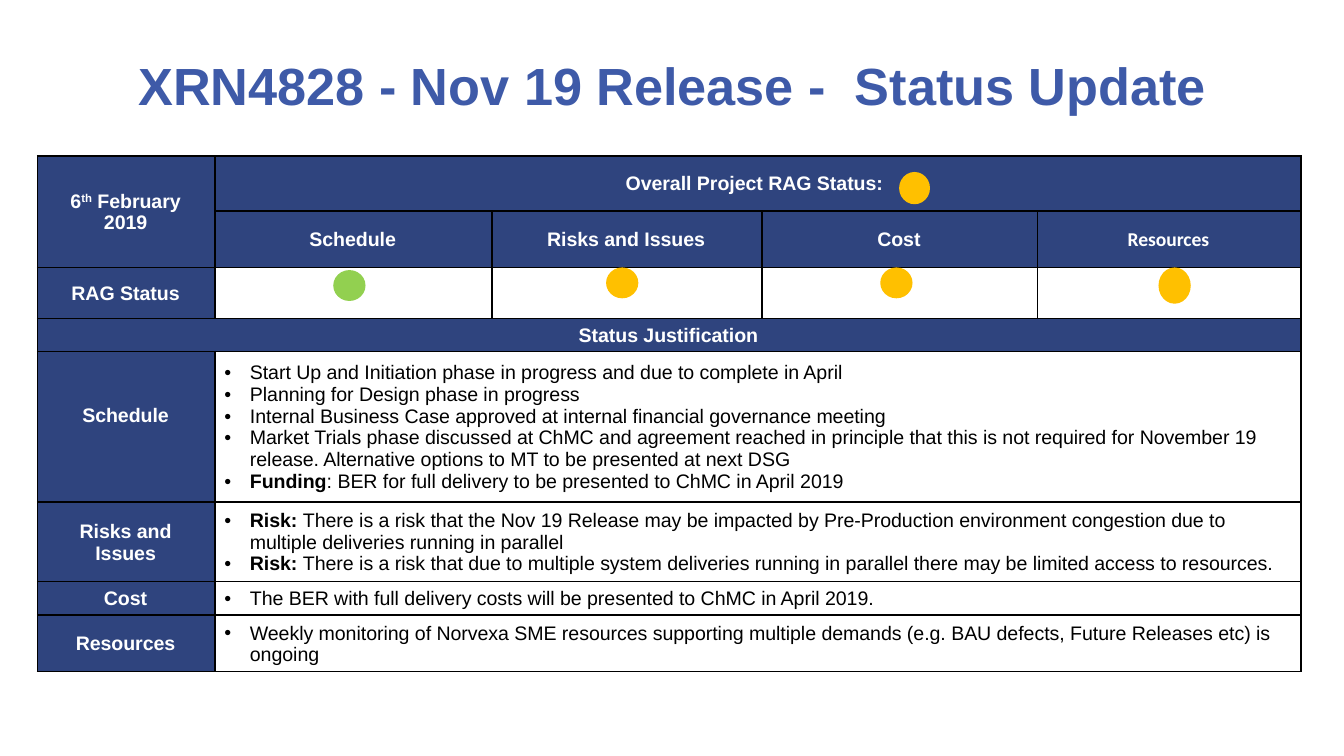
import dataclasses

import pptx
import pptx.dml.color
import pptx.enum.shapes
import pptx.enum.text
import pptx.oxml
import pptx.oxml.ns
import pptx.util

Inches = pptx.util.Inches
Align = pptx.enum.text.PP_ALIGN
Anchor = pptx.enum.text.MSO_ANCHOR


@dataclasses.dataclass(frozen=True)
class Theme:
    """Colours, fonts and type sizes of the slide."""
    navy: str = "2F447E"
    title: str = "3E5AA8"
    white: str = "FFFFFF"
    black: str = "000000"
    amber: str = "FFC000"
    green: str = "92D050"
    font: str = "Arial"
    alternate_font: str = "Calibri"
    title_size: float = 28
    body_size: float = 10.5


THEME = Theme()
COLUMNS = [1.32, 2.06, 2.01, 2.05, 1.96]
ROWS = [0.41, 0.35, 0.38, 0.24, 0.97, 0.43, 0.25, 0.31]
TOPICS = ["Schedule", "Risks and Issues", "Cost", "Resources"]
JUSTIFICATIONS = [
    [
        [("Start Up and Initiation phase in progress and due to complete in April", False)],
        [("Planning for Design phase in progress", False)],
        [("Internal Business Case approved at internal financial governance meeting", False)],
        [("Market Trials phase discussed at ChMC and agreement reached in principle that this is "
          "not required for November 19 release. Alternative options to MT to be presented at "
          "next DSG", False)],
        [("Funding", True), (": BER for full delivery to be presented to ChMC in April 2019", False)],
    ],
    [
        [("Risk: ", True),
         ("There is a risk that the Nov 19 Release may be impacted by Pre-Production environment "
          "congestion due to multiple deliveries running in parallel", False)],
        [("Risk: ", True),
         ("There is a risk that due to multiple system deliveries running in parallel there may "
          "be limited access to resources.", False)],
    ],
    [[("The BER with full delivery costs will be presented to ChMC in April 2019.", False)]],
    [[("Weekly monitoring of Norvexa SME resources supporting multiple demands (e.g. BAU defects, "
       "Future Releases etc) is ongoing", False)]],
]
DOTS = [
    (6.41, 0.12, 0.23, 0.24, THEME.amber),
    (2.2, 0.85, 0.24, 0.23, THEME.green),
    (4.23, 0.83, 0.24, 0.23, THEME.amber),
    (6.27, 0.83, 0.24, 0.23, THEME.amber),
    (8.34, 0.83, 0.24, 0.27, THEME.amber),
]


def set_attributes(target, values):
    """Set each named format value on the target."""
    for name, value in values.items():
        setattr(target, name, value)


def add_run(paragraph, text, color, bold=True, size=THEME.body_size, font=THEME.font):
    """Add one formatted run and return it."""
    run = paragraph.add_run()
    run.text = text
    set_attributes(run.font, {"name": font, "size": pptx.util.Pt(size), "bold": bold})
    run.font.color.rgb = pptx.dml.color.RGBColor.from_string(color)
    return run


def add_title(slide, left, top, width, height):
    """Place the slide title in its box."""
    box = slide.shapes.add_textbox(Inches(left), Inches(top), Inches(width), Inches(height))
    set_attributes(box.text_frame, {"word_wrap": True, "vertical_anchor": Anchor.MIDDLE})
    paragraph = box.text_frame.paragraphs[0]
    paragraph.alignment = Align.CENTER
    add_run(paragraph, "XRN4828 - Nov 19 Release -  Status Update", THEME.title,
            size=THEME.title_size)


def format_cell(cell):
    """Give a cell its margins, black borders and empty fill."""
    set_attributes(cell, {
        "vertical_anchor": Anchor.MIDDLE,
        "margin_left": Inches(0.07), "margin_right": Inches(0.08),
        "margin_top": Inches(0.04), "margin_bottom": Inches(0.03),
    })
    properties = cell._tc.get_or_add_tcPr()
    for side in ("lnL", "lnR", "lnT", "lnB"):
        properties.append(pptx.oxml.parse_xml(
            f'<a:{side} {pptx.oxml.ns.nsdecls("a")} w="12700"><a:solidFill>'
            f'<a:srgbClr val="{THEME.black}"/></a:solidFill></a:{side}>'))
    cell.fill.background()


def fill_heading(cell, text="", font=THEME.font):
    """Make a navy heading cell and return its paragraph."""
    cell.fill.solid()
    cell.fill.fore_color.rgb = pptx.dml.color.RGBColor.from_string(THEME.navy)
    paragraph = cell.text_frame.paragraphs[0]
    paragraph.alignment = Align.CENTER
    if text:
        add_run(paragraph, text, THEME.white, font=font)
    return paragraph


def fill_bullets(cell, items):
    """Write the items as bulleted paragraphs."""
    namespace = pptx.oxml.ns.nsdecls("a")
    for index, runs in enumerate(items):
        frame = cell.text_frame
        paragraph = frame.add_paragraph() if index else frame.paragraphs[0]
        properties = paragraph._p.get_or_add_pPr()
        properties.set("marL", str(Inches(0.19)))
        properties.set("indent", str(Inches(-0.19)))
        for element in (f'buFont {namespace} typeface="{THEME.font}"',
                        f'buChar {namespace} char="•"'):
            properties.append(pptx.oxml.parse_xml(f"<a:{element}/>"))
        set_attributes(paragraph.font, {"name": THEME.font, "size": pptx.util.Pt(THEME.body_size)})
        for text, bold in runs:
            add_run(paragraph, text, THEME.black, bold)


def add_status_table(slide, left, top, width, height):
    """Place the status table in its box."""
    frame = slide.shapes.add_table(len(ROWS), len(COLUMNS), Inches(left), Inches(top),
                                   Inches(width), Inches(height))
    table = frame.table
    set_attributes(table, {"first_row": False, "horz_banding": False})
    for column, size in zip(table.columns, COLUMNS):
        column.width = Inches(size)
    for row, size in zip(table.rows, ROWS):
        row.height = Inches(size)
    frame.height = Inches(height)
    for cell in table.iter_cells():
        format_cell(cell)

    table.cell(0, 0).merge(table.cell(1, 0))
    table.cell(0, 1).merge(table.cell(0, 4))
    table.cell(3, 0).merge(table.cell(3, 4))
    date = fill_heading(table.cell(0, 0))
    add_run(date, "6", THEME.white)
    ordinal = add_run(date, "th", THEME.white)
    ordinal._r.get_or_add_rPr().set("baseline", "30000")
    add_run(date, " February 2019", THEME.white)
    fill_heading(table.cell(0, 1), "Overall Project RAG Status: ")
    fill_heading(table.cell(2, 0), "RAG Status")
    fill_heading(table.cell(3, 0), "Status Justification")

    for index, (topic, items) in enumerate(zip(TOPICS, JUSTIFICATIONS)):
        font = THEME.alternate_font if topic == "Resources" else THEME.font
        fill_heading(table.cell(1, index + 1), topic, font)
        row = index + 4
        fill_heading(table.cell(row, 0), topic)
        table.cell(row, 1).merge(table.cell(row, 4))
        fill_bullets(table.cell(row, 1), items)
    table.cell(4, 0).margin_bottom = Inches(0.2)


def add_status_dots(slide, left, top):
    """Place the RAG dots relative to the table corner."""
    for x, y, width, height, color in DOTS:
        dot = slide.shapes.add_shape(pptx.enum.shapes.MSO_SHAPE.OVAL, Inches(left + x),
                                     Inches(top + y), Inches(width), Inches(height))
        dot.shadow.inherit = False
        dot.fill.solid()
        dot.fill.fore_color.rgb = pptx.dml.color.RGBColor.from_string(color)
        dot.line.fill.background()


def main():
    """Build and save the status slide."""
    presentation = pptx.Presentation()
    set_attributes(presentation, {"slide_width": Inches(10), "slide_height": Inches(10 * 9 / 16)})
    slide = presentation.slides.add_slide(presentation.slide_layouts[6])
    add_title(slide, 0.5, 0.28, 9, 0.7)
    add_status_table(slide, 0.28, 1.16, sum(COLUMNS), 3.79)
    add_status_dots(slide, 0.28, 1.16)
    presentation.save("out.pptx")


if __name__ == "__main__":
    main()
